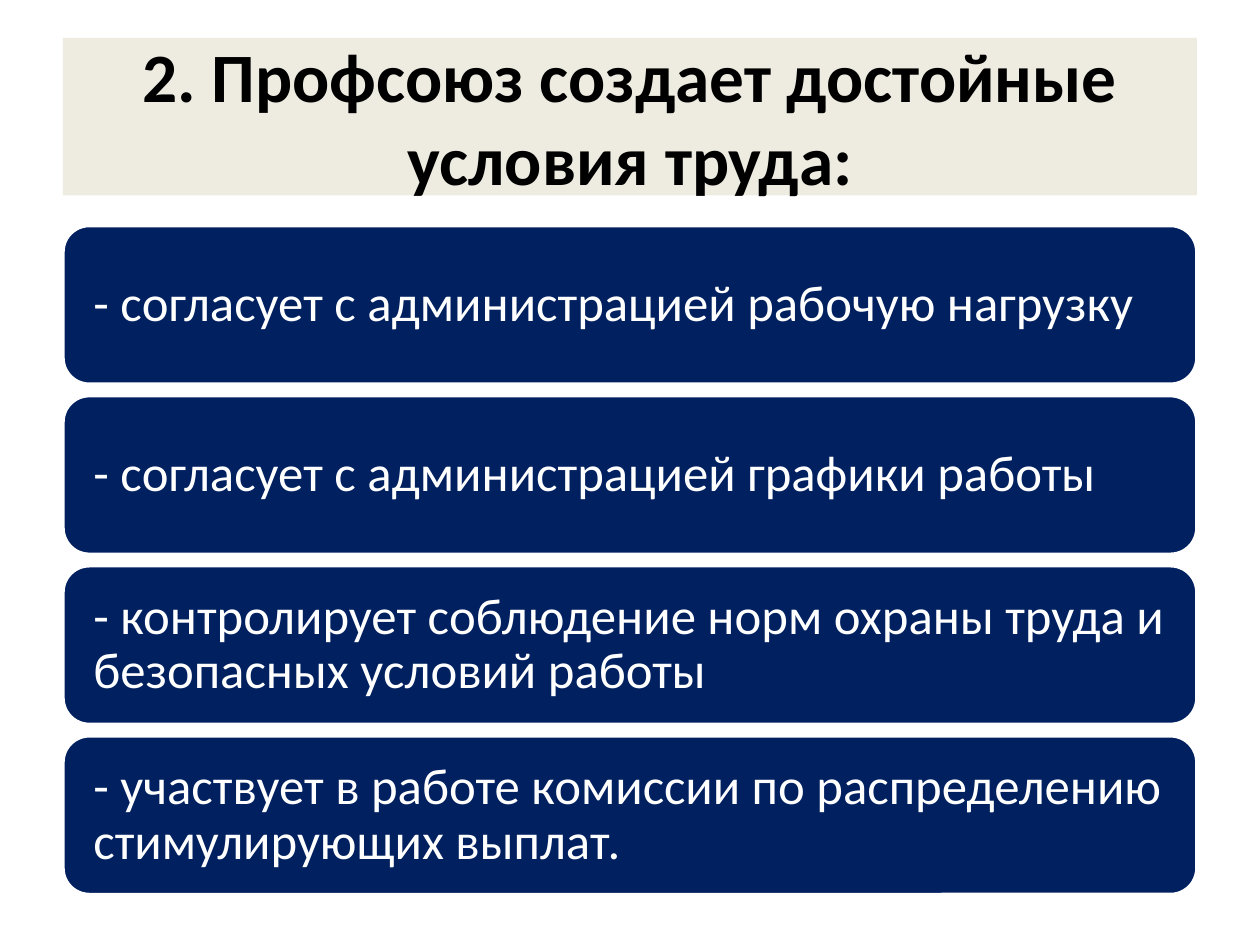
"""Build a slide on how the trade union creates decent working conditions."""
from pptx import Presentation
from pptx.dml.color import RGBColor
from pptx.enum import shapes, text
from pptx.util import Inches, Pt

TITLE = "2. Профсоюз создает достойные условия труда:"
DUTIES = [
    "- согласует с администрацией рабочую нагрузку",
    "- согласует с администрацией графики работы",
    "- контролирует соблюдение норм охраны труда и безопасных условий работы",
    "- участвует в работе комиссии по распределению стимулирующих выплат.",
]
LEFT, WIDTH = 0.5, 9
TITLE_TOP, TITLE_HEIGHT = 0.3, 1.25
CARD_TOP, CARD_HEIGHT, CARD_STEP = 1.79, 1.26, 1.35


def color(value):
    return RGBColor.from_string(value)


def add_panel(slide, kind, top, height, fill, words, size, ink, align, inset, bold=False):
    shape = slide.shapes.add_shape(
        kind, Inches(LEFT), Inches(top), Inches(WIDTH), Inches(height))
    shape.shadow.inherit = False
    shape.fill.solid()
    shape.fill.fore_color.rgb = color(fill)
    shape.line.fill.background()
    frame = shape.text_frame
    frame.word_wrap = True
    frame.vertical_anchor = text.MSO_ANCHOR.MIDDLE
    frame.margin_left = frame.margin_right = Inches(inset)
    frame.margin_top = frame.margin_bottom = Inches(inset)
    paragraph = frame.paragraphs[0]
    paragraph.alignment = align
    run = paragraph.add_run()
    run.text = words
    run.font.name = "Calibri"
    run.font.size = Pt(size)
    run.font.bold = bold
    run.font.color.rgb = color(ink)
    return shape


def main():
    presentation = Presentation()
    presentation.slide_width, presentation.slide_height = Inches(10), Inches(7.5)
    slide = presentation.slides.add_slide(presentation.slide_layouts[6])
    add_panel(slide, shapes.MSO_SHAPE.RECTANGLE, TITLE_TOP, TITLE_HEIGHT, "EEECE1",
              TITLE, 39.6, "000000", text.PP_ALIGN.CENTER, 0.05, bold=True)
    for index, duty in enumerate(DUTIES):
        card = add_panel(slide, shapes.MSO_SHAPE.ROUNDED_RECTANGLE,
                         CARD_TOP + index * CARD_STEP, CARD_HEIGHT, "002060",
                         duty, 29, "FFFFFF", text.PP_ALIGN.LEFT, 0.18)
        card.line.color.rgb = color("FFFFFF")
        card.line.width = Pt(2)
        card.text_frame.paragraphs[0].line_spacing = 0.9
    presentation.save("out.pptx")


if __name__ == "__main__":
    main()
